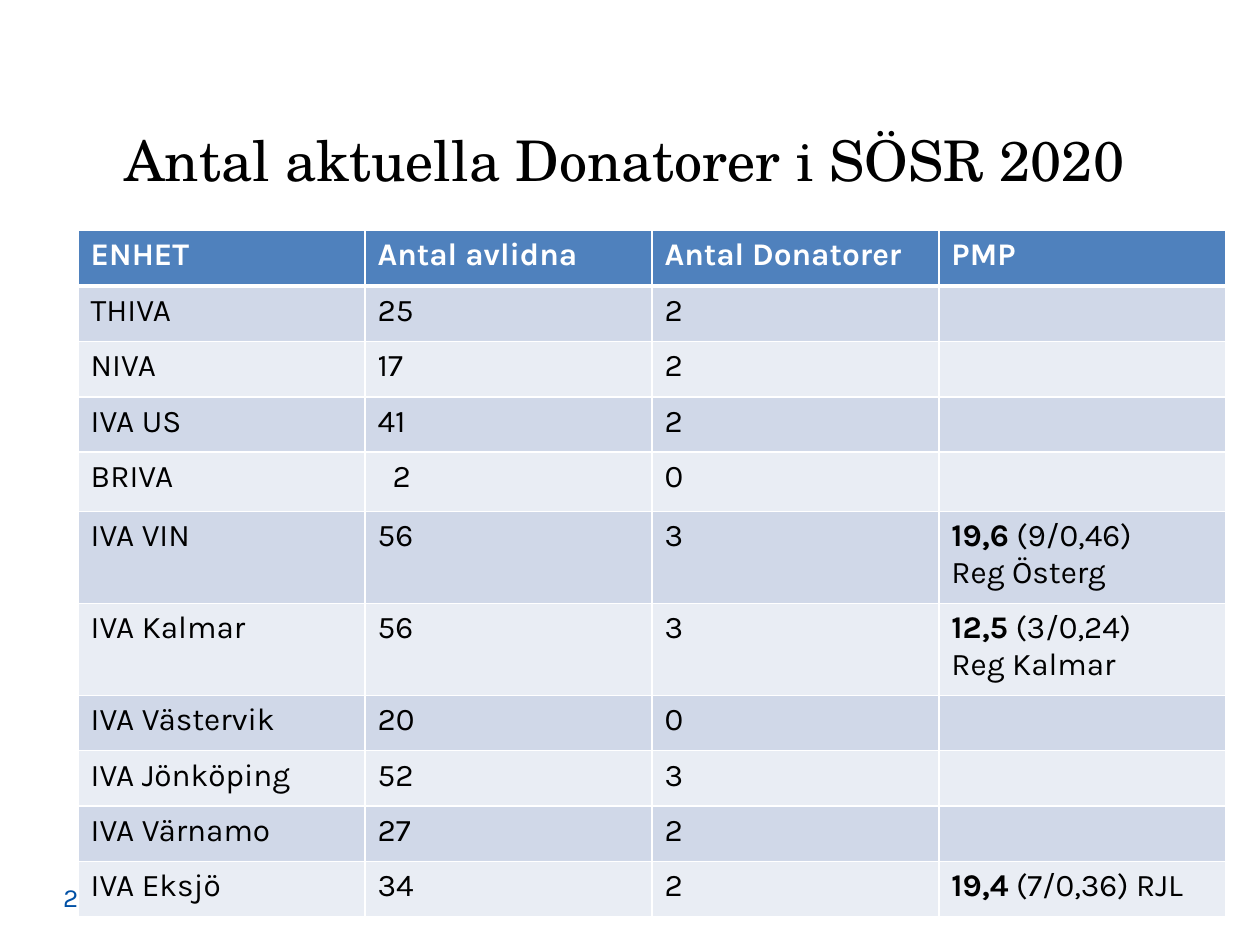
from lxml import etree
from pptx import Presentation
from pptx.dml.color import RGBColor
from pptx.enum import text
from pptx.oxml import ns
from pptx.util import Inches, Pt

SANS, SERIF = "Karla", "TeX Gyre Schola"
WHITE, BLACK, BLUE, HEADER = "FFFFFF", "000000", "0050A5", "4F81BD"
BANDS = ("D0D8E8", "E9EDF4")

HEADINGS = ("ENHET", "Antal avlidna", "Antal Donatorer", "PMP")
# Unit, deceased, donors, then PMP as (bold figure, calculation, region line)
UNITS = (
    ("THIVA", "25", "2", None),
    ("NIVA", "17", "2", None),
    ("IVA US", "41", "2", None),
    ("BRIVA", "2", "0", None),
    ("IVA VIN", "56", "3", ("19,6", " (9/0,46)", "Reg Österg")),
    ("IVA Kalmar", "56", "3", ("12,5", " (3/0,24)", "Reg Kalmar")),
    ("IVA Västervik", "20", "0", None),
    ("IVA Jönköping", "52", "3", None),
    ("IVA Värnamo", "27", "2", None),
    ("IVA Eksjö", "34", "2", ("19,4", " (7/0,36) RJL", None)),
)
ROW_HEIGHTS = [0.44] * 4 + [0.47] + [0.73] * 2 + [0.44] * 4


def colour(value):
    return RGBColor.from_string(value)


def write(para, words, size=18, font=SANS, ink=BLACK, bold=False, align=None):
    """Add one formatted span to a paragraph."""
    span = para.add_run()
    span.text = words
    span.font.size = Pt(size)
    span.font.name = font
    span.font.bold = bold
    span.font.color.rgb = colour(ink)
    if align is not None:
        para.alignment = align


def add_label(page, box, words, anchor, **style):
    label = page.shapes.add_textbox(*map(Inches, box))
    frame = label.text_frame
    frame.word_wrap = True
    frame.vertical_anchor = anchor
    write(frame.paragraphs[0], words, **style)


def dress_cell(cell, fill, bottom=1):
    """Set white borders, then the fill, which must follow them in the XML."""
    props = cell._tc.get_or_add_tcPr()
    for side, width in (("L", 1), ("R", 1), ("T", 1), ("B", bottom)):
        line = etree.SubElement(props, ns.qn(f"a:ln{side}"), w=str(Pt(width)))
        solid = etree.SubElement(line, ns.qn("a:solidFill"))
        etree.SubElement(solid, ns.qn("a:srgbClr"), val=WHITE)
    cell.fill.solid()
    cell.fill.fore_color.rgb = colour(fill)


def write_pmp(cell, figure, calculation, region):
    frame = cell.text_frame
    write(frame.paragraphs[0], figure, bold=True)
    write(frame.paragraphs[0], calculation)
    if region:
        write(frame.add_paragraph(), region)


def add_donor_table(page, box):
    frame = page.shapes.add_table(len(UNITS) + 1, len(HEADINGS), *map(Inches, box))
    table = frame.table
    for column in table.columns:
        column.width = Inches(box[2] / len(HEADINGS))
    for row, height in zip(table.rows, ROW_HEIGHTS):
        row.height = Inches(height)

    # Header row
    for cell, heading in zip(table.rows[0].cells, HEADINGS):
        dress_cell(cell, HEADER, bottom=3)
        write(cell.text_frame.paragraphs[0], heading, ink=WHITE, bold=True)

    # One banded row per unit
    for index, (*values, pmp) in enumerate(UNITS):
        cells = list(table.rows[index + 1].cells)
        for cell in cells:
            dress_cell(cell, BANDS[index % 2])
        for cell, value in zip(cells, values):
            write(cell.text_frame.paragraphs[0], value)
        if len(values[1]) == 1:  # indent a single-digit count
            cells[1].margin_left = Inches(0.22)
        if pmp:
            write_pmp(cells[3], *pmp)


def main():
    deck = Presentation()
    deck.slide_width, deck.slide_height = Inches(10), Inches(7.5)
    page = deck.slides.add_slide(deck.slide_layouts[6])

    add_donor_table(page, (0.62, 1.83, 9.11, 5.46))
    # Title
    add_label(page, (0.89, 0.57, 8.39, 1.38), "Antal aktuella Donatorer i SÖSR 2020",
              text.MSO_ANCHOR.MIDDLE, size=32, font=SERIF)
    # Page number
    add_label(page, (0.17, 6.89, 0.55, 0.4), "2", text.MSO_ANCHOR.BOTTOM,
              size=15, ink=BLUE, align=text.PP_ALIGN.RIGHT)
    deck.save("out.pptx")


if __name__ == "__main__":
    main()
